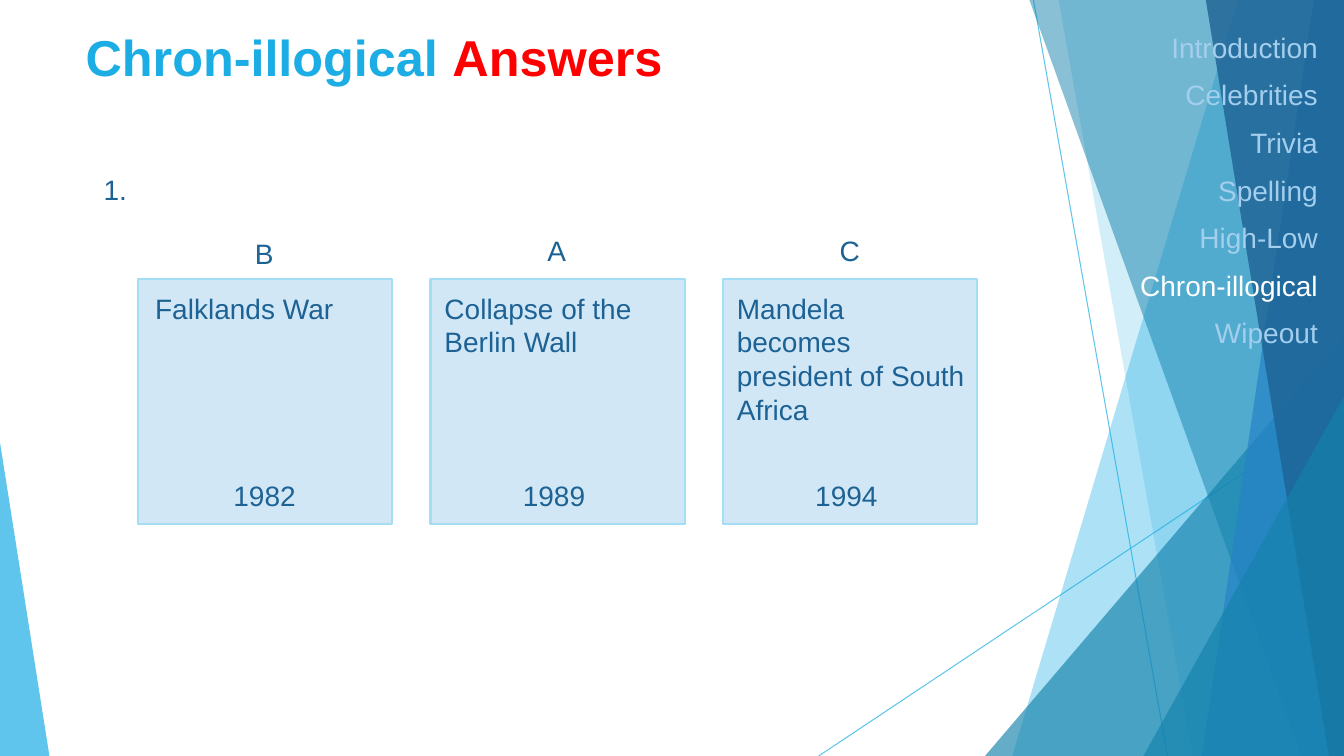
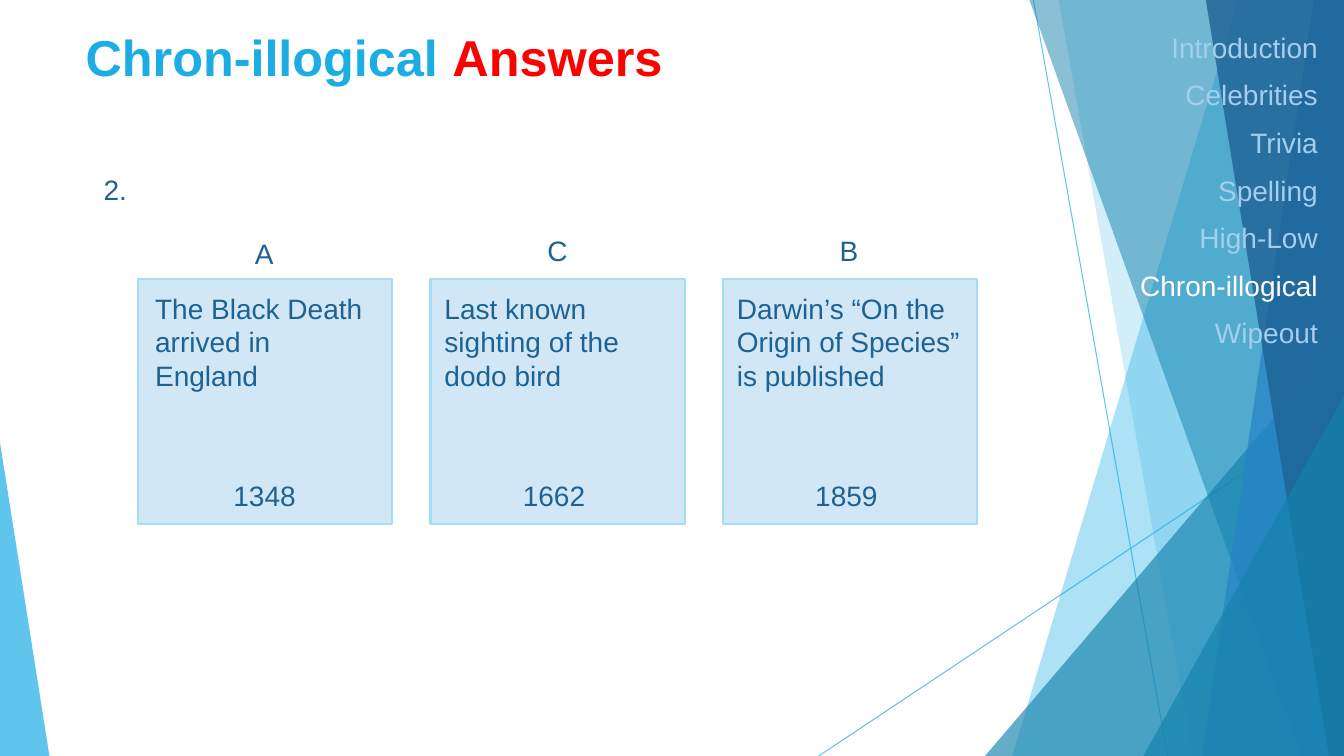
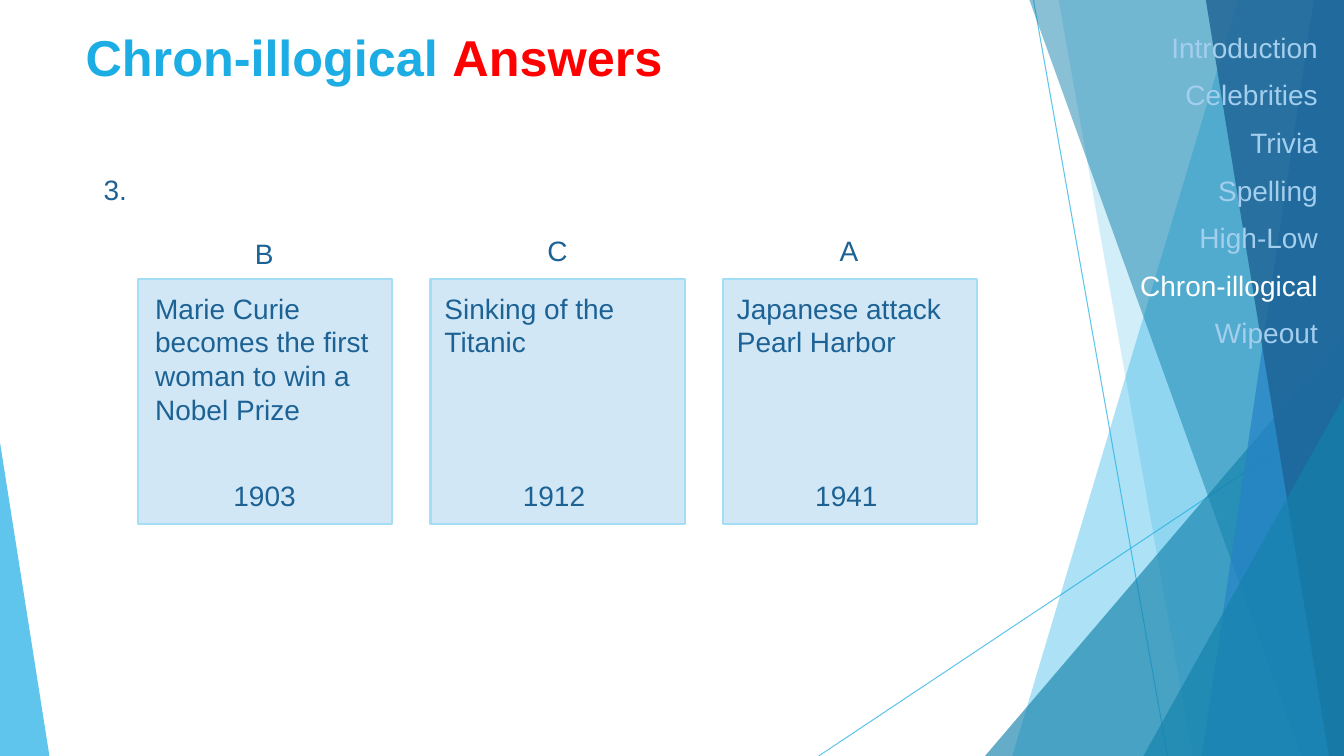
from dataclasses import dataclass
from typing import Any

from lxml.etree import SubElement
from pptx import Presentation
from pptx.dml.color import RGBColor
from pptx.enum.shapes import MSO_CONNECTOR, MSO_SHAPE
from pptx.enum.text import MSO_ANCHOR, MSO_AUTO_SIZE, PP_ALIGN
from pptx.oxml.ns import qn
from pptx.util import Inches, Pt

COLOURS = {
    "sky": "1CADE4",
    "teal": "1482AC",
    "blue": "2683C6",
    "navy": "1D6294",
    "red": "FF0000",
    "white": "FFFFFF",
    "menu": "A3CEED",
    "card": "D1E7F6",
    "card_edge": "A4DEF4",
}
FONT = "Arial"
BODY_SIZE = 20
WIDTH, HEIGHT = 13.33, 7.5

# Card grid
CARD_LEFT, CARD_TOP, CARD_WIDTH, CARD_HEIGHT = 1.37, 2.77, 2.52, 2.43
CARD_STEP = 2.9
LETTER_TOPS = (2.3, 2.27, 2.27)
EVENT_LEFTS = (1.44, 4.31, 7.21)
EVENT_WIDTHS = (2.36, 2.38, 2.47)
YEAR_OFFSET = 0.77
LINE_HEIGHT = 0.34

MENU = ("Introduction", "Celebrities", "Trivia", "Spelling", "High-Low",
        "Chron-illogical", "Wipeout")
CURRENT = "Chron-illogical"


@dataclass(frozen=True)
class Ray:
    start: tuple[float, float]
    end: tuple[float, float]


@dataclass(frozen=True)
class Band:
    """Four-sided band that runs to the right edge of the slide."""
    top_left: float
    bottom_left: float
    colour: str
    alpha: int


@dataclass(frozen=True)
class Wedge:
    """Right-angled triangle standing on the bottom edge."""
    left: float
    top: float
    width: float
    apex: float
    colour: str
    alpha: int


@dataclass(frozen=True)
class Event:
    letter: str
    paragraphs: tuple[str, ...]
    lines: int
    year: str


@dataclass(frozen=True)
class Span:
    text: str
    colour: str = "navy"
    size: int = BODY_SIZE
    bold: bool = False


RAYS = (Ray((10.25, 0), (11.58, HEIGHT)), Ray((WIDTH, 4.03), (8.12, HEIGHT)))
PANELS: tuple[Band | Wedge, ...] = (
    Band(12.28, 10.04, "sky", 36),
    Band(10.5, 11.83, "sky", 20),
    Wedge(9.77, 3.33, 3.56, 1, "teal", 66),
    Band(10.21, 12.91, "teal", 50),
    Band(13.03, 11.92, "blue", 70),
    Band(11.96, 13.18, "navy", 80),
    Wedge(11.34, 3.93, 1.99, 1, "teal", 66),
    Wedge(0, 4.39, 0.49, 0, "sky", 70),
)

QUESTIONS = (
    (
        Event("B", ("Falklands War",), 1, "1982"),
        Event("A", ("Collapse of the Berlin Wall",), 2, "1989"),
        Event("C", ("Mandela becomes president of South Africa",), 3, "1994"),
    ),
    (
        Event("A", ("The Black Death arrived in England",), 3, "1348"),
        Event("C", ("Last known sighting of the dodo bird",), 3, "1662"),
        Event("B", ("Darwin’s “On the Origin of Species”", "is published"), 3, "1859"),
    ),
    (
        Event("B", ("Marie Curie", "becomes the first woman to win a Nobel Prize"), 4, "1903"),
        Event("C", ("Sinking of the Titanic",), 2, "1912"),
        Event("A", ("Japanese attack Pearl Harbor",), 2, "1941"),
    ),
)


def colour_of(name: str) -> RGBColor:
    return RGBColor.from_string(COLOURS[name])


def fade(shape: Any, alpha: int) -> None:
    for colour in shape.element.spPr.iter(qn("a:srgbClr")):
        SubElement(colour, qn("a:alpha"), val=str(alpha * 1000))


def paint(shape: Any, colour: str) -> None:
    shape.shadow.inherit = False
    shape.fill.solid()
    shape.fill.fore_color.rgb = colour_of(colour)
    shape.line.fill.background()


def add_text(page: Any, left: float, top: float, width: float, height: float,
             paragraphs: list[list[Span]], align: PP_ALIGN = PP_ALIGN.LEFT,
             wrap: bool = True, grow: bool = True, before: float = 0) -> None:
    box = page.shapes.add_textbox(Inches(left), Inches(top), Inches(width), Inches(height))
    frame = box.text_frame
    frame.word_wrap = wrap
    frame.auto_size = MSO_AUTO_SIZE.SHAPE_TO_FIT_TEXT if grow else MSO_AUTO_SIZE.NONE
    frame.vertical_anchor = MSO_ANCHOR.TOP
    for index, spans in enumerate(paragraphs):
        para = frame.add_paragraph() if index else frame.paragraphs[0]
        para.alignment = align
        para.space_before = Pt(before)
        for span in spans:
            run = para.add_run()
            run.text = span.text
            run.font.name = FONT
            run.font.size = Pt(span.size)
            run.font.bold = span.bold
            run.font.color.rgb = colour_of(span.colour)


def add_ray(page: Any, ray: Ray) -> None:
    points = [Inches(value) for value in (*ray.start, *ray.end)]
    line = page.shapes.add_connector(MSO_CONNECTOR.STRAIGHT, *points)
    line.line.color.rgb = colour_of("sky")
    line.line.width = Pt(0.75)
    fade(line, 70)
    SubElement(line.element.spPr, qn("a:effectLst"))


def add_panel(page: Any, panel: Band | Wedge) -> None:
    if isinstance(panel, Band):
        corners = [(WIDTH, 0), (WIDTH, HEIGHT), (panel.bottom_left, HEIGHT)]
        builder = page.shapes.build_freeform(Inches(panel.top_left), 0)
        builder.add_line_segments([(Inches(x), Inches(y)) for x, y in corners], close=True)
        shape = builder.convert_to_shape()
    else:
        shape = page.shapes.add_shape(
            MSO_SHAPE.ISOSCELES_TRIANGLE, Inches(panel.left), Inches(panel.top),
            Inches(panel.width), Inches(HEIGHT - panel.top))
        shape.adjustments[0] = panel.apex
    paint(shape, panel.colour)
    fade(shape, panel.alpha)


def add_frame(page: Any) -> None:
    """Backdrop, title and menu shared by all slides."""
    for ray in RAYS:
        add_ray(page, ray)
    for panel in PANELS:
        add_panel(page, panel)
    add_text(page, 0.75, 0.21, 11.37, 1.26,
             [[Span("Chron-illogical ", "sky", 36, True), Span("Answers", "red", 36, True)]],
             grow=False)
    entries = [[Span(name, "white" if name == CURRENT else "menu")] for name in MENU]
    add_text(page, 10.56, 0.25, 2.61, 4.52, entries, PP_ALIGN.RIGHT, grow=False, before=10)


def add_card(page: Any, column: int, event: Event) -> None:
    left = CARD_LEFT + column * CARD_STEP
    card = page.shapes.add_shape(MSO_SHAPE.RECTANGLE, Inches(left), Inches(CARD_TOP),
                                 Inches(CARD_WIDTH), Inches(CARD_HEIGHT))
    paint(card, "card")
    card.line.color.rgb = colour_of("card_edge")
    card.line.width = Pt(1.5)

    event_left = EVENT_LEFTS[column]
    add_text(page, left + 1.06, LETTER_TOPS[column], 0.4, 0.44,
             [[Span(event.letter)]], wrap=False)
    add_text(page, event_left, 2.84, EVENT_WIDTHS[column], 0.1 + event.lines * LINE_HEIGHT,
             [[Span(text)] for text in event.paragraphs])
    add_text(page, event_left + YEAR_OFFSET, 4.7, 0.83, 0.44,
             [[Span(event.year)]], PP_ALIGN.CENTER, wrap=False)


def main() -> None:
    deck = Presentation()
    deck.slide_width, deck.slide_height = Inches(WIDTH), Inches(HEIGHT)
    for number, events in enumerate(QUESTIONS, start=1):
        page = deck.slides.add_slide(deck.slide_layouts[6])
        add_frame(page)
        add_text(page, 0.93, 1.66, 0.44, 0.44, [[Span(f"{number}.")]], wrap=False)
        for column, event in enumerate(events):
            add_card(page, column, event)
    deck.save("out.pptx")


if __name__ == "__main__":
    main()
